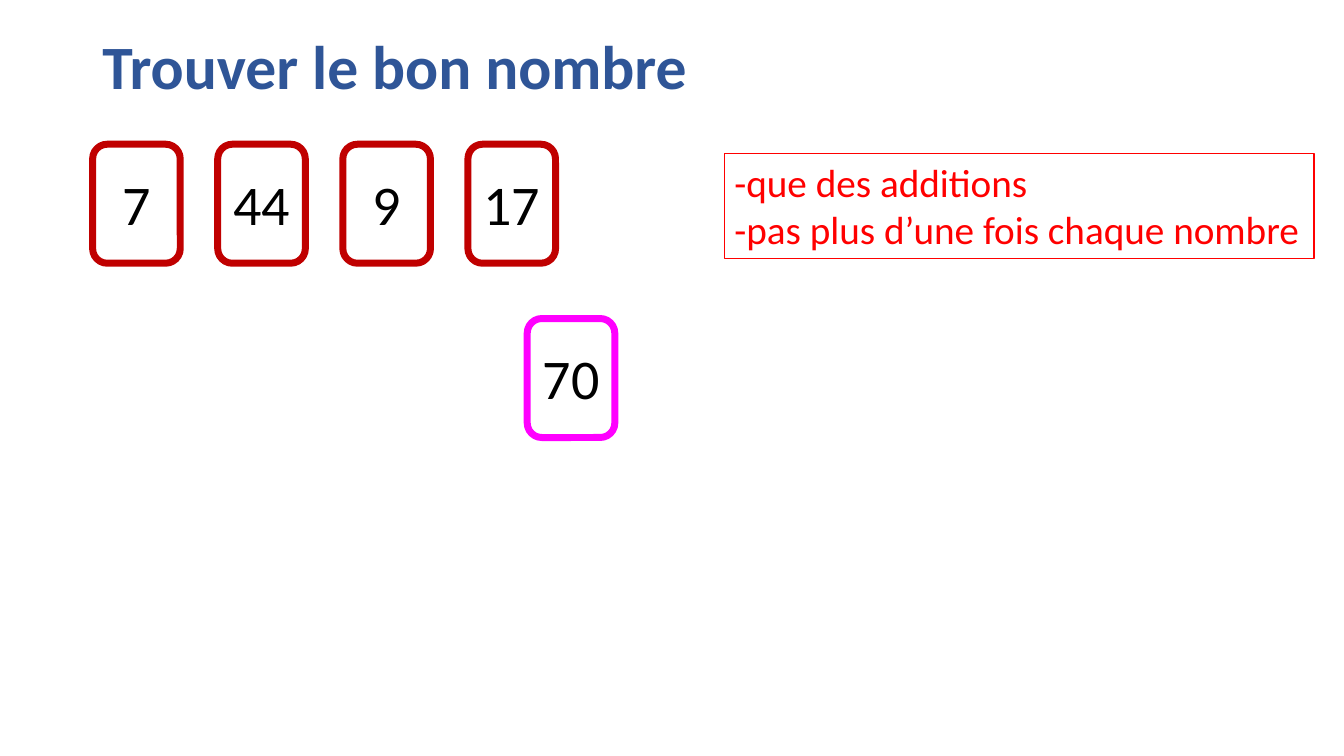
"""Build the number puzzle slide."""
from pptx import Presentation
from pptx.dml.color import RGBColor
from pptx.enum.shapes import MSO_SHAPE
from pptx.enum.text import MSO_ANCHOR, PP_ALIGN
from pptx.util import Pt

COLORS = {"title": "2F5597", "card": "C00000", "goal": "FF00FF",
          "rule": "FF0000", "text": "000000"}


def tint(name):
    return RGBColor.from_string(COLORS[name])


def style(frame, size, color, bold=False, align=PP_ALIGN.LEFT):
    frame.word_wrap = True
    for para in frame.paragraphs:
        para.alignment = align
        for run in para.runs:
            font = run.font
            font.name, font.size, font.bold = "Calibri", Pt(size), bold
            font.color.rgb = tint(color)


def add_frame(shapes, kind, box, color, width):
    shape = shapes.add_shape(kind, *map(Pt, box))
    shape.shadow.inherit = False
    shape.fill.background()
    shape.line.color.rgb = tint(color)
    shape.line.width = Pt(width)
    return shape


def add_title(slide, text):
    frame = slide.shapes.add_textbox(Pt(66), Pt(19.5), Pt(828), Pt(61)).text_frame
    frame.text = text
    frame.vertical_anchor = MSO_ANCHOR.MIDDLE
    frame.paragraphs[0].line_spacing = 0.9
    style(frame, 44, "title", bold=True)


def add_card(slide, text, left, top, color):
    group = slide.shapes.add_group_shape()
    add_frame(group.shapes, MSO_SHAPE.ROUNDED_RECTANGLE,
              (left, top, 62.6, 85), color, 5)
    box = group.shapes.add_textbox(Pt(left + 4), Pt(top + 14.6), Pt(54.6), Pt(55.7))
    frame = box.text_frame
    frame.text = text
    frame.margin_left = frame.margin_right = Pt(0)
    style(frame, 40, "text", align=PP_ALIGN.CENTER)


def add_rules(slide, text):
    box = add_frame(slide.shapes, MSO_SHAPE.RECTANGLE,
                    (517.5, 109.8, 421.2, 75), "rule", 1)
    box.text_frame.text = text
    box.text_frame.vertical_anchor = MSO_ANCHOR.TOP
    style(box.text_frame, 28, "rule")


def main():
    deck = Presentation()
    deck.slide_width, deck.slide_height = Pt(960), Pt(540)
    slide = deck.slides.add_slide(deck.slide_layouts[6])
    add_title(slide, "Trouver le bon nombre")
    for i, number in enumerate(["7", "44", "9", "17"]):
        add_card(slide, number, 66.2 + 89.35 * i, 103, "card")
    add_rules(slide, "-que des additions\n-pas plus d’une fois chaque nombre")
    add_card(slide, "70", 376.6, 227.5, "goal")
    deck.save("out.pptx")


if __name__ == "__main__":
    main()
